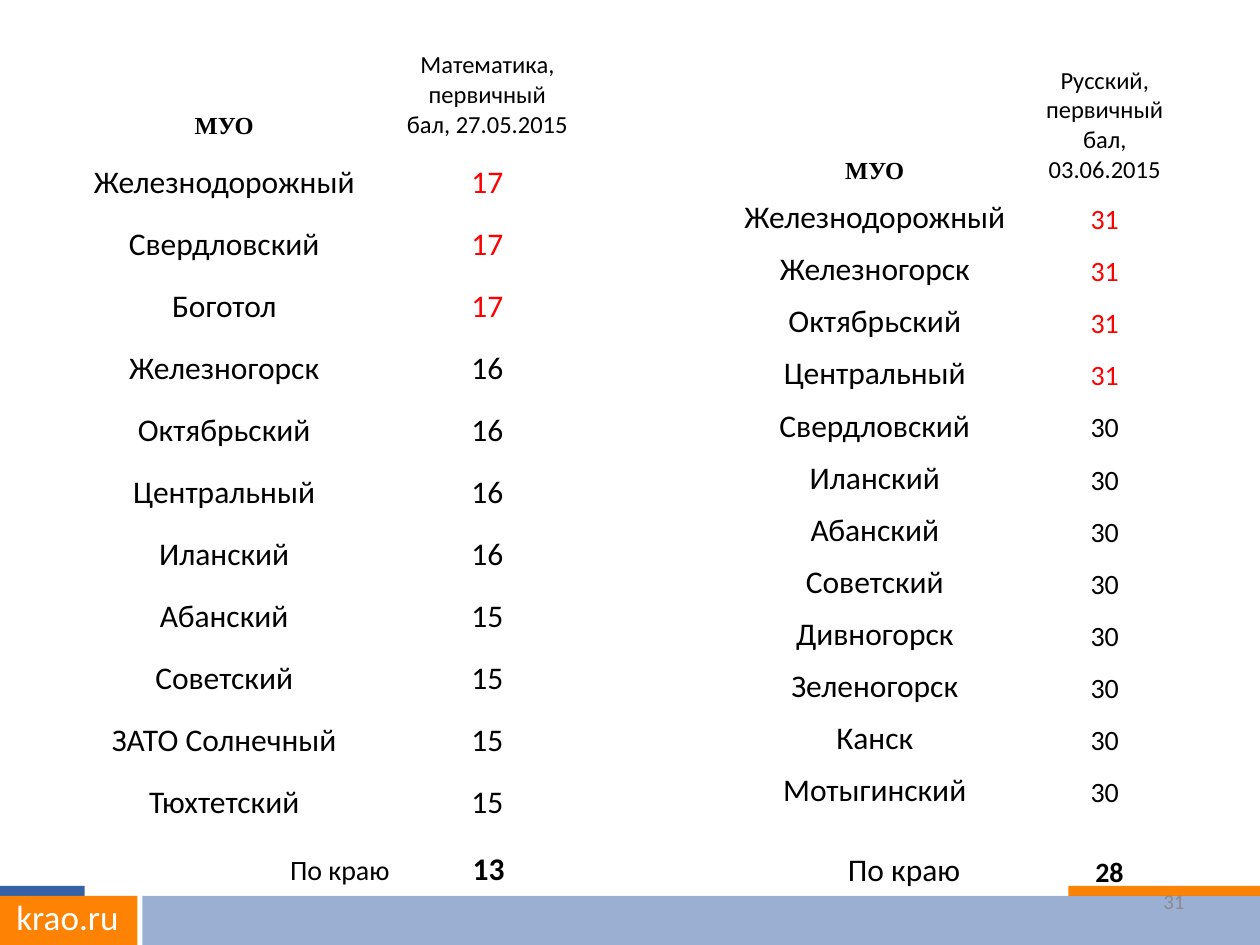
from lxml import etree
from pptx import Presentation
from pptx.dml.color import RGBColor
from pptx.enum.shapes import MSO_SHAPE
from pptx.enum.text import MSO_ANCHOR, PP_ALIGN
from pptx.oxml.ns import qn
from pptx.util import Cm, Pt

RECTANGLE = MSO_SHAPE.RECTANGLE
TOP, MIDDLE, BOTTOM = MSO_ANCHOR.TOP, MSO_ANCHOR.MIDDLE, MSO_ANCHOR.BOTTOM
CENTER, RIGHT = PP_ALIGN.CENTER, PP_ALIGN.RIGHT

BLUE = RGBColor(0x36, 0x61, 0xA6)
ORANGE = RGBColor(0xFE, 0x83, 0x04)
WHITE = RGBColor(0xFF, 0xFF, 0xFF)
BLACK = RGBColor(0, 0, 0)
RED = RGBColor(0xFF, 0, 0)
GRAY = RGBColor(0x8C, 0x8C, 0x8C)
PLAIN_TABLE_STYLE = "{2D5ABB26-0587-4C30-8999-92F81FD0307C}"

MATH_SCORES = [
    ("Железнодорожный", 17), ("Свердловский", 17), ("Боготол", 17),
    ("Железногорск", 16), ("Октябрьский", 16), ("Центральный", 16),
    ("Иланский", 16), ("Абанский", 15), ("Советский", 15),
    ("ЗАТО Солнечный", 15), ("Тюхтетский", 15),
]
RUSSIAN_SCORES = [
    ("Железнодорожный", 31), ("Железногорск", 31), ("Октябрьский", 31),
    ("Центральный", 31), ("Свердловский", 30), ("Иланский", 30),
    ("Абанский", 30), ("Советский", 30), ("Дивногорск", 30),
    ("Зеленогорск", 30), ("Канск", 30), ("Мотыгинский", 30),
]


def add_run(paragraph, text, size, color=BLACK, bold=False, font="Calibri",
            alignment=CENTER):
    paragraph.alignment = alignment
    run = paragraph.add_run()
    run.text = text
    run.font.size = Pt(size)
    run.font.name = font
    run.font.bold = bold
    run.font.color.rgb = color


def add_bar(slide, left, top, width, height, color, opacity=100):
    shape = slide.shapes.add_shape(RECTANGLE, Cm(left), Cm(top), Cm(width), Cm(height))
    shape.shadow.inherit = False
    shape.line.fill.background()
    shape.fill.solid()
    shape.fill.fore_color.rgb = color
    if opacity < 100:
        color_element = shape.fill._xPr.find(".//" + qn("a:srgbClr"))
        etree.SubElement(color_element, qn("a:alpha"), val=str(opacity * 1000))


def add_label(slide, left, top, width, height, text, size, color, alignment, anchor):
    box = slide.shapes.add_textbox(Cm(left), Cm(top), Cm(width), Cm(height))
    frame = box.text_frame
    frame.word_wrap = True
    frame.vertical_anchor = anchor
    add_run(frame.paragraphs[0], text, size, color, alignment=alignment)


def add_plain_table(slide, left, top, widths, heights):
    frame = slide.shapes.add_table(len(heights), len(widths), Cm(left), Cm(top),
                                   Cm(sum(widths)), Cm(sum(heights)))
    table = frame.table
    table.first_row = False
    table.horz_banding = False
    table._tbl.tblPr.find(qn("a:tableStyleId")).text = PLAIN_TABLE_STYLE
    for column, width in zip(table.columns, widths):
        column.width = Cm(width)
    for row, height in zip(table.rows, heights):
        row.height = Cm(height)
    for cell in table.iter_cells():
        cell.fill.background()
        cell.vertical_anchor = BOTTOM
        cell.margin_left = cell.margin_right = cell.margin_top = Cm(0.02)
        cell.margin_bottom = 0
    return table


def fill_cell(cell, text, size, **style):
    add_run(cell.text_frame.paragraphs[0], text, size, **style)


def add_score_table(slide, left, top, widths, header_heights, row_height,
                    subject, scores, score_size):
    heights = header_heights + [row_height] * len(scores)
    table = add_plain_table(slide, left, top, widths, heights)
    last_header = len(header_heights) - 1
    if last_header:
        table.cell(0, 0).merge(table.cell(last_header, 0))
        spacer = table.cell(0, 1).text_frame.paragraphs[0]
        etree.SubElement(spacer._p, qn("a:endParaRPr"), sz="700")
    fill_cell(table.cell(0, 0), "МУО", 14, bold=True, font="Times New Roman")
    fill_cell(table.cell(last_header, 1), subject, 14)
    best = max(score for _, score in scores)
    for row, (district, score) in enumerate(scores, last_header + 1):
        fill_cell(table.cell(row, 0), district, 18)
        fill_cell(table.cell(row, 1), str(score), score_size,
                  color=RED if score == best else BLACK)


def add_total(slide, left, top, widths, score, label_size, score_size):
    table = add_plain_table(slide, left, top, widths, [0.79])
    fill_cell(table.cell(0, 0), "По краю", label_size)
    fill_cell(table.cell(0, 1), str(score), score_size, bold=True)


def add_footer(slide):
    add_bar(slide, 0, 17.86, 1.71, 0.2, BLUE)
    add_bar(slide, 21.54, 17.86, 3.86, 0.2, ORANGE)
    add_bar(slide, 0, 18.06, 2.77, 0.99, ORANGE)
    add_bar(slide, 2.87, 18.06, 22.53, 0.99, BLUE, opacity=50)
    add_label(slide, 0, 17.93, 2.72, 1.12, "krao.ru", 20, WHITE, CENTER, TOP)
    add_label(slide, 18.21, 17.65, 5.92, 1.02, "31", 12, GRAY, RIGHT, MIDDLE)


def main():
    presentation = Presentation()
    presentation.slide_width = Cm(25.4)
    presentation.slide_height = Cm(19.05)
    slide = presentation.slides.add_slide(presentation.slide_layouts[6])
    add_footer(slide)
    add_score_table(slide, 0.89, 0.53, [7.26, 3.35], [0.36, 1.93], 1.25,
                    "Математика, первичный бал, 27.05.2015", MATH_SCORES, 18)
    add_score_table(slide, 14.5, 0.91, [6.27, 3], [2.82], 1.05,
                    "Русский, первичный бал, 03.06.2015", RUSSIAN_SCORES, 16)
    add_total(slide, 15.42, 17.15, [5.61, 2.67], 28, 18, 16)
    add_total(slide, 5.49, 17.12, [2.72, 3.28], 13, 16, 18)
    presentation.save("out.pptx")


if __name__ == "__main__":
    main()
